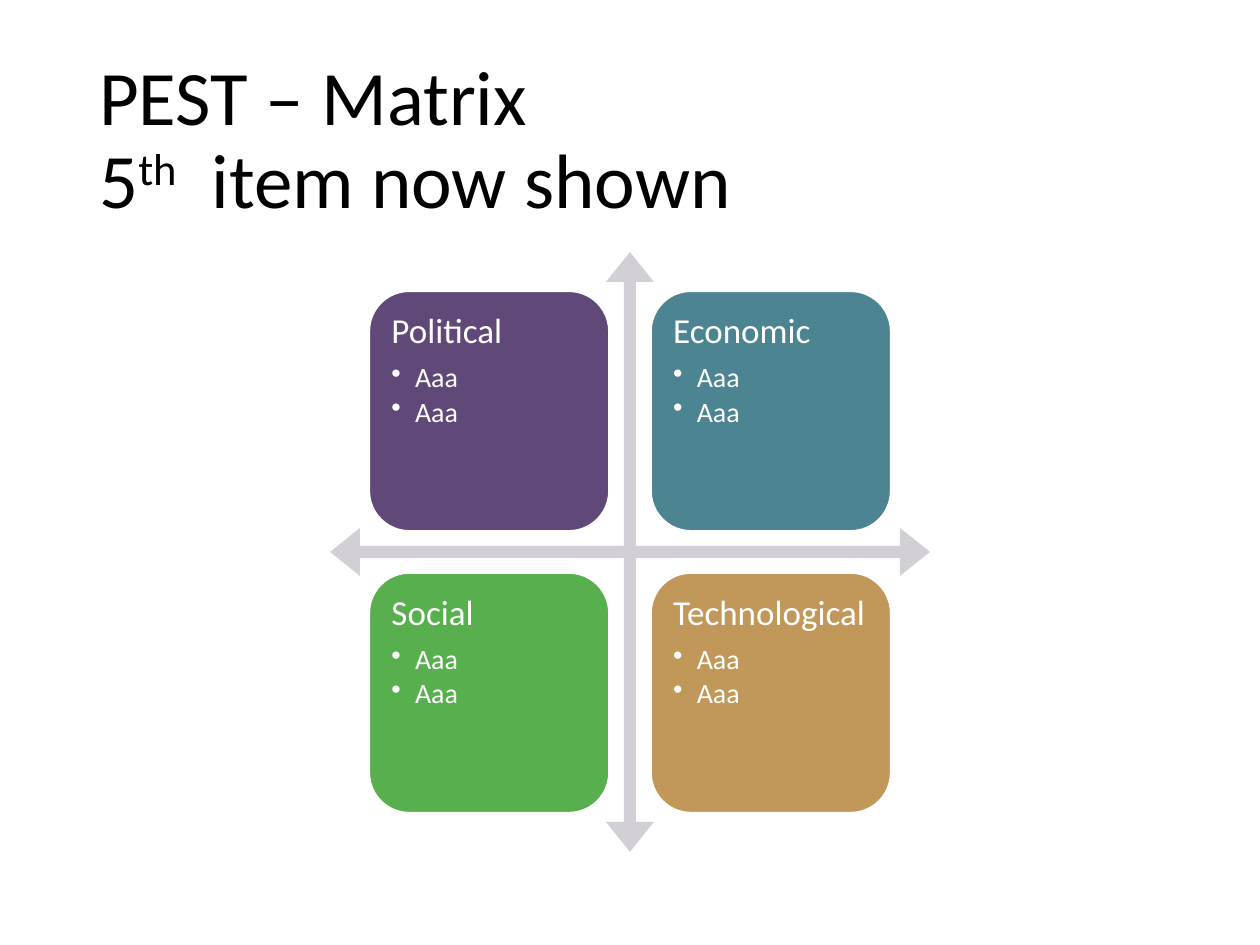
from dataclasses import dataclass

from lxml import etree
from pptx import Presentation
from pptx.dml.color import RGBColor
from pptx.enum.shapes import MSO_AUTO_SHAPE_TYPE as Preset
from pptx.enum.text import MSO_ANCHOR as Anchor, MSO_AUTO_SIZE as AutoSize, PP_ALIGN as Align
from pptx.oxml.ns import qn
from pptx.util import Pt


@dataclass(frozen=True)
class Theme:
    font: str = "Calibri"
    title_color: str = "000000"
    text_color: str = "FFFFFF"
    outline: str = "FFFFFF"
    arrow: str = "D2CFD6"
    title_size: float = 44
    heading_size: float = 20
    item_size: float = 16


theme = Theme()


def add_run(paragraph, text, size, color):
    run = paragraph.add_run()
    run.text = text
    formats = {"name": theme.font, "size": Pt(size)}
    for name, value in formats.items():
        setattr(run.font, name, value)
    run.font.color.rgb = RGBColor.from_string(color)
    return run


def add_filled_shape(slide, preset, left, top, size, color):
    shape = slide.shapes.add_shape(preset, Pt(left), Pt(top), Pt(size), Pt(size))
    shape.shadow.inherit = False
    shape.fill.solid()
    shape.fill.fore_color.rgb = RGBColor.from_string(color)
    return shape


presentation = Presentation()
presentation.slide_width, presentation.slide_height = Pt(720), Pt(540)
slide = presentation.slides.add_slide(presentation.slide_layouts[5])

# Title with a superscript ordinal
title = slide.shapes.title
title_box = {"left": 49.5, "top": 28.75, "width": 621, "height": 104.4}
for name, value in title_box.items():
    setattr(title, name, Pt(value))
title.text_frame.auto_size = AutoSize.NONE
title.text_frame.vertical_anchor = Anchor.MIDDLE
paragraph = title.text_frame.paragraphs[0]
paragraph.alignment = Align.LEFT
paragraph.line_spacing = 0.9
add_run(paragraph, "PEST – Matrix", theme.title_size, theme.title_color)
paragraph.add_line_break()
add_run(paragraph, "5", theme.title_size, theme.title_color)
ordinal = add_run(paragraph, "th", theme.title_size, theme.title_color)
ordinal.font._element.set("baseline", "30000")
add_run(paragraph, "  item now shown", theme.title_size, theme.title_color)

# Four-way arrow behind the tiles
center_x, center_y = 360, 315.4
arrow_size = 342.8
arrow = add_filled_shape(slide, Preset.QUAD_ARROW, center_x - arrow_size / 2,
                         center_y - arrow_size / 2, arrow_size, theme.arrow)
arrow.line.fill.background()
for index, value in enumerate((0.02, 0.04, 0.05)):
    arrow.adjustments[index] = value

# Two-by-two grid of tiles
tile_size, pitch, inset, indent = 137, 161, 6, 13.5
tiles = [
    ("Political", "604878"),
    ("Economic", "4C8492"),
    ("Social", "57AF4D"),
    ("Technological", "C19859"),
]
items = ["Aaa", "Aaa"]

for index, (heading, color) in enumerate(tiles):
    row, column = divmod(index, 2)
    left = center_x + (column - 0.5) * pitch - tile_size / 2
    top = center_y + (row - 0.5) * pitch - tile_size / 2
    tile = add_filled_shape(slide, Preset.ROUNDED_RECTANGLE, left, top, tile_size, color)
    tile.line.color.rgb = RGBColor.from_string(theme.outline)
    tile.line.width = Pt(1)

    frame = tile.text_frame
    frame.word_wrap = True
    frame.vertical_anchor = Anchor.TOP
    for side in ("left", "top", "right", "bottom"):
        setattr(frame, f"margin_{side}", Pt(inset))

    # Heading
    paragraph = frame.paragraphs[0]
    paragraph.alignment = Align.LEFT
    paragraph.line_spacing = 0.9
    paragraph.space_after = Pt(7)
    add_run(paragraph, heading, theme.heading_size, theme.text_color)

    # Bulleted items
    for item in items:
        paragraph = frame.add_paragraph()
        paragraph.level = 1
        paragraph.alignment = Align.LEFT
        paragraph.line_spacing = 0.9
        paragraph.space_after = Pt(2.4)
        properties = paragraph._p.get_or_add_pPr()
        properties.set("marL", str(Pt(indent)))
        properties.set("indent", str(-Pt(indent)))
        etree.SubElement(properties, qn("a:buChar"), char="•")
        add_run(paragraph, item, theme.item_size, theme.text_color)

presentation.save("out.pptx")
